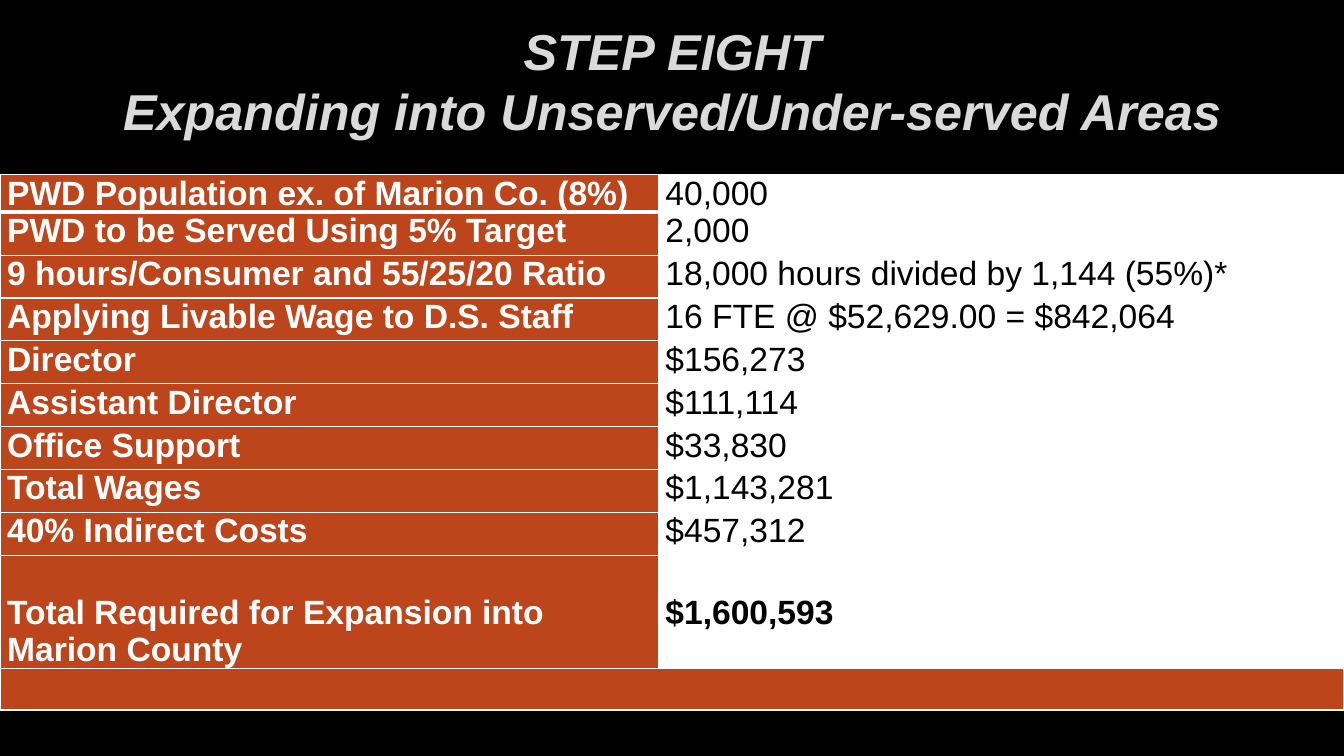
import dataclasses

import lxml.etree
import pptx
import pptx.dml.color
import pptx.enum.text
import pptx.oxml
import pptx.oxml.ns
import pptx.util

Cm = pptx.util.Cm
Pt = pptx.util.Pt


@dataclasses.dataclass(frozen=True)
class Theme:
    font: str = "Arial"
    title_size: int = 36
    table_size: int = 24
    background: str = "000000"
    title: str = "DADADA"
    title_outline: str = "404040"
    label_fill: str = "BC451B"
    label_text: str = "FFFFFF"
    value_fill: str = "FFFFFF"
    value_text: str = "000000"
    border: str = "FFFFFF"


BUDGET_ROWS = [
    ("PWD Population ex. of Marion Co. (8%)", "40,000"),
    ("PWD to be Served Using 5% Target", "2,000"),
    ("9 hours/Consumer and 55/25/20 Ratio", "18,000 hours divided by 1,144 (55%)*"),
    ("Applying Livable Wage to D.S. Staff", "16 FTE @ $52,629.00 = $842,064"),
    ("Director", "$156,273"),
    ("Assistant Director", "$111,114"),
    ("Office Support", "$33,830"),
    ("Total Wages", "$1,143,281"),
    ("40% Indirect Costs", "$457,312"),
    ("Total Required for Expansion into Marion County", "$1,600,593"),
]
COLUMN_WIDTHS = (16.59, 17.28)
FIRST_HEIGHT, ROW_HEIGHT, TOTAL_HEIGHT, FOOTER_HEIGHT = 0.95, 1.08, 2.84, 1.04
TOTAL_TOP_MARGIN = 0.97


def rgb(color):
    return pptx.dml.color.RGBColor.from_string(color)


class SlideBuilder:
    def __init__(self, presentation, theme):
        self.theme = theme
        self.slide = presentation.slides.add_slide(presentation.slide_layouts[5])
        fill = self.slide.background.fill
        fill.solid()
        fill.fore_color.rgb = rgb(theme.background)

    def add_run(self, paragraph, text, size, color, bold=False, italic=False):
        run = paragraph.add_run()
        run.text = text
        font = run.font
        font.name, font.size = self.theme.font, Pt(size)
        font.bold, font.italic = bold, italic
        font.color.rgb = rgb(color)
        return run

    def add_title(self, lines, left, top, width, height):
        title = self.slide.shapes.title
        title.left, title.top = Cm(left), Cm(top)
        title.width, title.height = Cm(width), Cm(height)
        frame = title.text_frame
        frame.word_wrap = True
        frame.vertical_anchor = pptx.enum.text.MSO_ANCHOR.MIDDLE
        paragraph = frame.paragraphs[0]
        paragraph.alignment = pptx.enum.text.PP_ALIGN.CENTER
        for index, line in enumerate(lines):
            if index:
                paragraph.add_line_break()
            run = self.add_run(paragraph, line, self.theme.title_size,
                               self.theme.title, bold=True, italic=True)
            self.outline_text(run)
        for line_break in paragraph._p.findall(pptx.oxml.ns.qn("a:br")):
            properties = lxml.etree.SubElement(line_break, pptx.oxml.ns.qn("a:rPr"))
            properties.set("sz", str(self.theme.title_size * 100))

    def outline_text(self, run):
        """Give the run a thin, nearly transparent outline."""
        outline = pptx.oxml.parse_xml(
            f'<a:ln {pptx.oxml.ns.nsdecls("a")} w="{Pt(0.75)}"><a:solidFill>'
            f'<a:srgbClr val="{self.theme.title_outline}"><a:alpha val="10000"/>'
            '</a:srgbClr></a:solidFill><a:prstDash val="solid"/></a:ln>')
        run.font._element.insert(0, outline)

    def add_table(self, left, top, column_widths, row_heights):
        table = self.slide.shapes.add_table(
            len(row_heights), len(column_widths), Cm(left), Cm(top),
            Cm(sum(column_widths)), Cm(sum(row_heights))).table
        table.first_row = table.horz_banding = False
        for column, width in zip(table.columns, column_widths):
            column.width = Cm(width)
        for row, height in zip(table.rows, row_heights):
            row.height = Cm(height)
        return table

    def format_cell(self, cell, fill, top_border=1, bottom_border=1, top_margin=0):
        cell.margin_left = cell.margin_right = Cm(0.18)
        cell.margin_top, cell.margin_bottom = Cm(top_margin), 0
        widths = {"lnL": 1, "lnR": 1, "lnT": top_border, "lnB": bottom_border}
        properties = cell._tc.get_or_add_tcPr()
        for side, width in widths.items():
            properties.append(pptx.oxml.parse_xml(
                f'<a:{side} {pptx.oxml.ns.nsdecls("a")} w="{Pt(width)}"><a:solidFill>'
                f'<a:srgbClr val="{self.theme.border}"/></a:solidFill></a:{side}>'))
        cell.fill.solid()
        cell.fill.fore_color.rgb = rgb(fill)

    def add_budget_table(self, left, top, rows):
        theme = self.theme
        heights = [FIRST_HEIGHT, *[ROW_HEIGHT] * (len(rows) - 2),
                   TOTAL_HEIGHT, FOOTER_HEIGHT]
        table = self.add_table(left, top, COLUMN_WIDTHS, heights)
        total_row = len(rows) - 1
        for row_index, (label, value) in enumerate(rows):
            is_total = row_index == total_row
            columns = [(label, theme.label_fill, theme.label_text, True),
                       (value, theme.value_fill, theme.value_text, is_total)]
            for column_index, (text, fill, color, bold) in enumerate(columns):
                cell = table.cell(row_index, column_index)
                self.format_cell(cell, fill,
                                 top_border=3 if row_index == 1 else 1,
                                 bottom_border=3 if row_index == 0 else 1,
                                 top_margin=TOTAL_TOP_MARGIN if is_total else 0)
                self.add_run(cell.text_frame.paragraphs[0], text,
                             theme.table_size, color, bold)
        footer_row = len(rows)
        footer = table.cell(footer_row, 0)
        footer.merge(table.cell(footer_row, 1))
        for column_index in range(len(COLUMN_WIDTHS)):
            self.format_cell(table.cell(footer_row, column_index), theme.label_fill)


def main():
    presentation = pptx.Presentation()
    presentation.slide_width, presentation.slide_height = Cm(33.87), Cm(19.05)
    builder = SlideBuilder(presentation, Theme())
    builder.add_title(["STEP EIGHT", "Expanding into Unserved/Under-served Areas"],
                      left=2.57, top=0, width=28.75, height=4.06)
    builder.add_budget_table(left=0, top=4.4, rows=BUDGET_ROWS)
    presentation.save("out.pptx")


if __name__ == "__main__":
    main()
